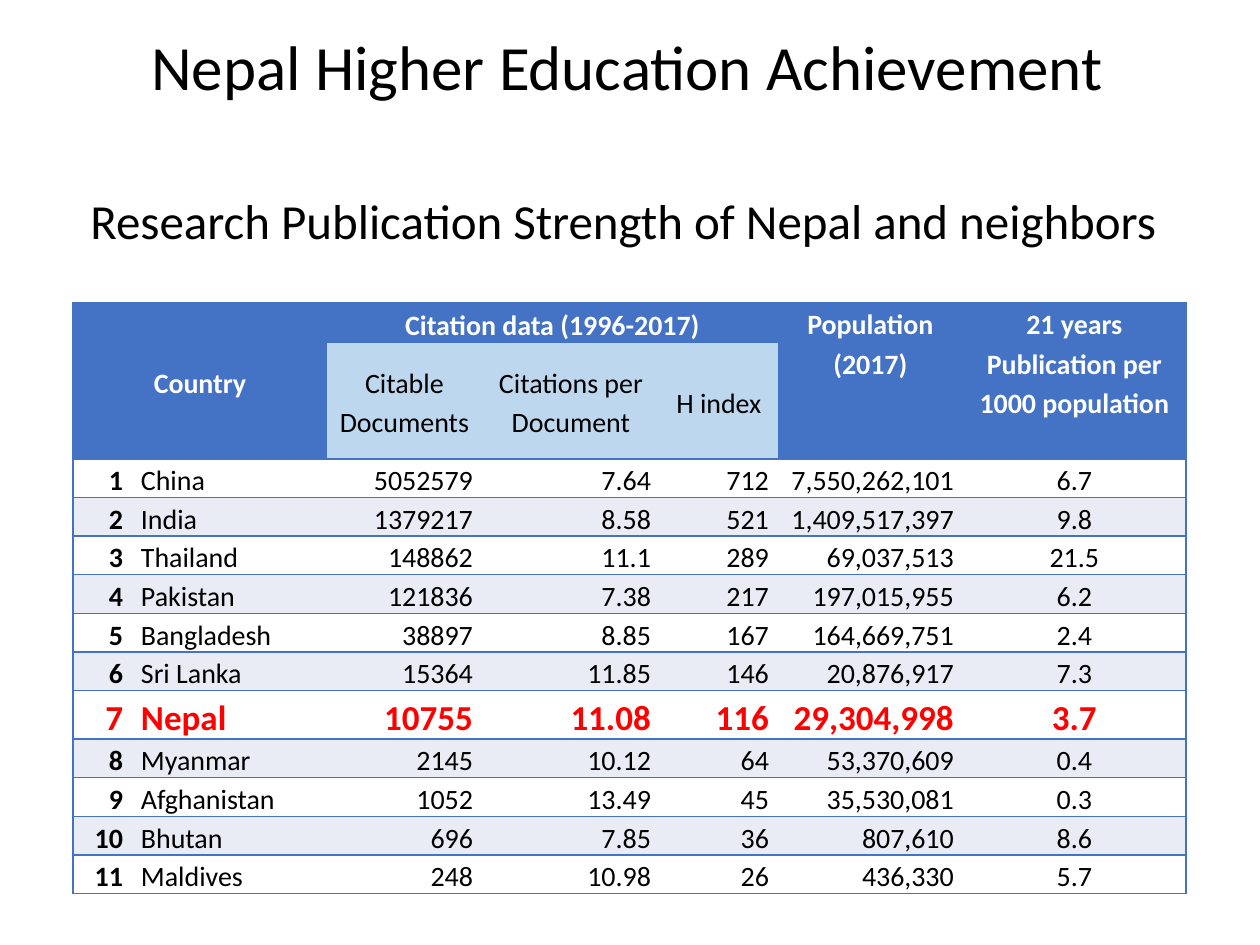
from pptx import Presentation
from pptx.dml.color import RGBColor as RGB
from pptx.enum.text import MSO_ANCHOR as ANC, MSO_AUTO_SIZE as AUTO, PP_ALIGN as AL
from pptx.oxml.ns import qn
from pptx.util import Pt
from lxml import etree

SCALE = 914400 / 126
COLORS = {
    "text": "000000", "white": "FFFFFF", "header": "4472C4",
    "subheader": "BDD7EE", "band": "E9EBF5", "highlight": "FF0000",
}
COL_WIDTHS = [59, 195, 155, 178, 118, 185, 223]
HEADER_HEIGHTS = [40, 114]
ROW_HEIGHT, HIGHLIGHT_HEIGHT = 38, 48
HIGHLIGHT = "Nepal"
# row, column, row span, column span, paragraphs, anchor
HEADERS = [
    (0, 0, 2, 2, ["Country"], ANC.MIDDLE),
    (0, 2, 1, 3, ["Citation data (1996-2017)"], ANC.MIDDLE),
    (0, 5, 2, 1, ["Population", "(2017)"], ANC.TOP),
    (0, 6, 2, 1, ["21 years Publication per 1000 population"], ANC.TOP),
]
SUBHEADERS = ["Citable Documents", "Citations per Document", "H index"]
COUNTRIES = [
    ("China", "5052579", "7.64", "712", "7,550,262,101", "6.7"),
    ("India", "1379217", "8.58", "521", "1,409,517,397", "9.8"),
    ("Thailand", "148862", "11.1", "289", "69,037,513", "21.5"),
    ("Pakistan", "121836", "7.38", "217", "197,015,955", "6.2"),
    ("Bangladesh", "38897", "8.85", "167", "164,669,751", "2.4"),
    ("Sri Lanka", "15364", "11.85", "146", "20,876,917", "7.3"),
    ("Nepal", "10755", "11.08", "116", "29,304,998", "3.7"),
    ("Myanmar", "2145", "10.12", "64", "53,370,609", "0.4"),
    ("Afghanistan", "1052", "13.49", "45", "35,530,081", "0.3"),
    ("Bhutan", "696", "7.85", "36", "807,610", "8.6"),
    ("Maldives", "248", "10.98", "26", "436,330", "5.7"),
]
ALIGNS = [AL.RIGHT, AL.LEFT, AL.RIGHT, AL.RIGHT, AL.RIGHT, AL.RIGHT, AL.CENTER]
ANCHORS = [ANC.BOTTOM] * 5 + [ANC.TOP] * 2


def px(n):
    return round(n * SCALE)


class Deck:
    font = "Calibri"
    cell_size = 16
    cell_margin = 9
    line_spacing = 1.15
    border_width = 1

    def __init__(self, width, height):
        self.prs = Presentation()
        self.prs.slide_width, self.prs.slide_height = px(width), px(height)
        self.s = self.prs.slides.add_slide(self.prs.slide_layouts[6])

    def run(self, p, text, size, color="text", bold=False):
        r = p.add_run()
        r.text = text
        r.font.name, r.font.size, r.font.bold = self.font, Pt(size), bold
        r.font.color.rgb = RGB.from_string(COLORS[color])

    def text(self, x, y, w, h, text, size, wrap=True):
        tf = self.s.shapes.add_textbox(px(x), px(y), px(w), px(h)).text_frame
        tf.word_wrap = wrap
        tf.auto_size = AUTO.SHAPE_TO_FIT_TEXT
        self.run(tf.paragraphs[0], text, size)

    def table(self, x, y, widths, heights):
        frame = self.s.shapes.add_table(len(heights), len(widths), px(x), px(y),
                                        px(sum(widths)), px(sum(heights)))
        tbl = frame.table
        for col, w in zip(tbl.columns, widths):
            col.width = px(w)
        for row, h in zip(tbl.rows, heights):
            row.height = px(h)
        return tbl

    def borders(self, cell, sides):
        """Draw the named sides (L, R, T, B) and clear the others."""
        tc_pr = cell._tc.get_or_add_tcPr()
        for side in "LRTB":
            ln = etree.SubElement(tc_pr, qn(f"a:ln{side}"), w=str(Pt(self.border_width)))
            if side in sides:
                fill = etree.SubElement(ln, qn("a:solidFill"))
                etree.SubElement(fill, qn("a:srgbClr"), val=COLORS["header"])
            else:
                etree.SubElement(ln, qn("a:noFill"))

    def fill(self, cell, color):
        cell.fill.solid()
        cell.fill.fore_color.rgb = RGB.from_string(COLORS[color])

    def cell(self, cell, lines, align, anchor, size=cell_size, color="text", bold=False):
        cell.margin_left = cell.margin_right = px(self.cell_margin)
        cell.margin_top = cell.margin_bottom = 0
        cell.vertical_anchor = anchor
        tf = cell.text_frame
        for i, line in enumerate(lines):
            p = tf.add_paragraph() if i else tf.paragraphs[0]
            p.alignment, p.line_spacing = align, self.line_spacing
            self.run(p, line, size, color, bold)


def row_color(row, col):
    if row == 1 and 2 <= col <= 4:
        return "subheader"
    if row < 2:
        return "header"
    return "band" if row % 2 else "white"


def border_sides(row, col):
    sides = "" if row < 2 and 2 <= col <= 4 else "TB"
    if row == 0:
        sides += "T"
    if row == 1:
        sides += "B"
    return sides + {0: "L", len(COL_WIDTHS) - 1: "R"}.get(col, "")


def main():
    deck = Deck(1260, 945)
    deck.text(78, 184, 1104, 72,
              "Research Publication Strength of Nepal and neighbors", 28, wrap=False)

    heights = HEADER_HEIGHTS + [HIGHLIGHT_HEIGHT if c[0] == HIGHLIGHT else ROW_HEIGHT
                                for c in COUNTRIES]
    tbl = deck.table(73, 303, COL_WIDTHS, heights)
    for row in range(len(heights)):
        for col in range(len(COL_WIDTHS)):
            deck.borders(tbl.cell(row, col), border_sides(row, col))
            deck.fill(tbl.cell(row, col), row_color(row, col))

    for row, col, rows, cols, lines, anchor in HEADERS:
        cell = tbl.cell(row, col)
        cell.merge(tbl.cell(row + rows - 1, col + cols - 1))
        deck.cell(cell, lines, AL.CENTER, anchor, color="white", bold=True)
    for col, label in enumerate(SUBHEADERS, 2):
        deck.cell(tbl.cell(1, col), [label], AL.CENTER, ANC.MIDDLE)

    for rank, country in enumerate(COUNTRIES, 1):
        special = country[0] == HIGHLIGHT
        size, color = (20, "highlight") if special else (deck.cell_size, "text")
        for col, value in enumerate((str(rank), *country)):
            deck.cell(tbl.cell(rank + 1, col), [value], ALIGNS[col], ANCHORS[col],
                      size, color, bold=special or col == 0)

    deck.text(139, 21, 982, 89, "Nepal Higher Education Achievement", 36)
    deck.prs.save("out.pptx")


if __name__ == "__main__":
    main()
